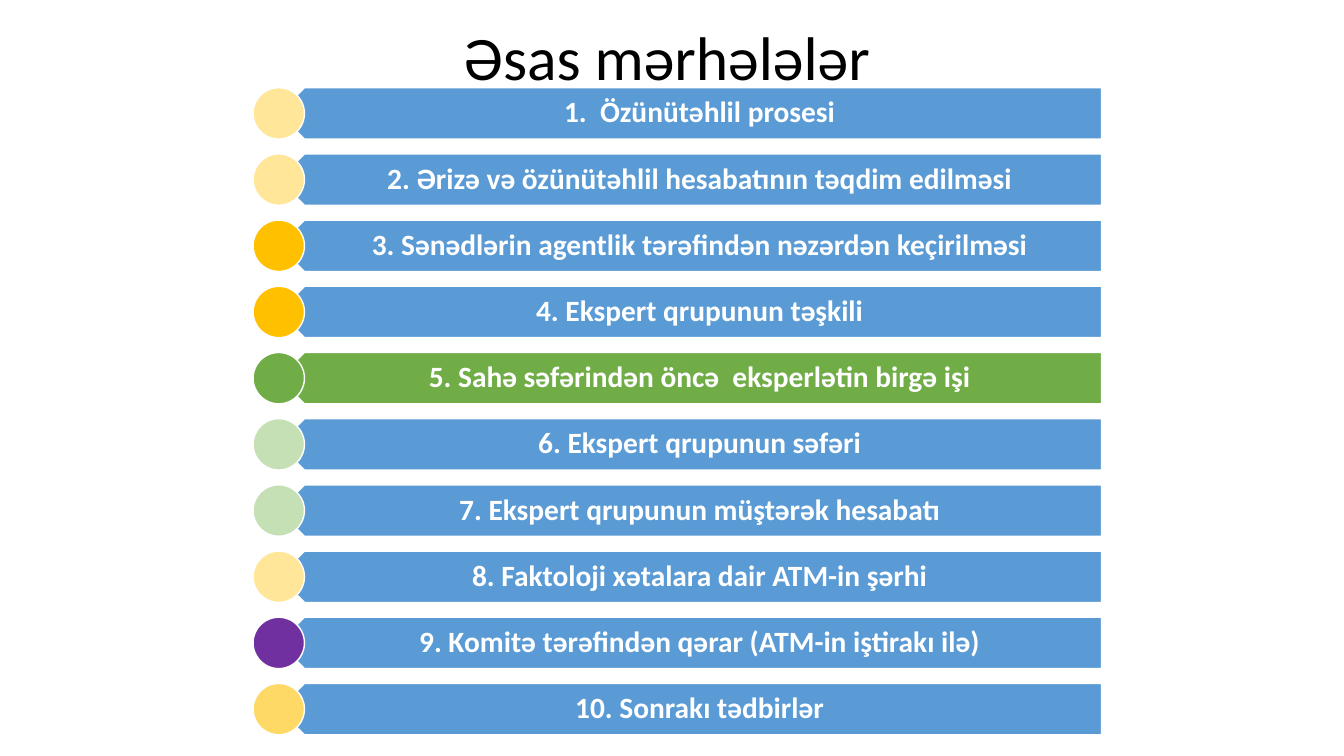
from dataclasses import dataclass

from pptx import Presentation
from pptx.dml.color import RGBColor
from pptx.enum.shapes import MSO_SHAPE
from pptx.enum.text import MSO_ANCHOR, PP_ALIGN
from pptx.util import Inches, Length, Pt

PENTAGON = MSO_SHAPE.PENTAGON
OVAL = MSO_SHAPE.OVAL
MIDDLE = MSO_ANCHOR.MIDDLE
CENTER = PP_ALIGN.CENTER


@dataclass(frozen=True)
class Theme:
    font: str = "Calibri"
    title_size: int = 44
    stage_size: int = 21
    line_width: int = 1
    line_spacing: float = 0.9
    black: str = "000000"
    white: str = "FFFFFF"
    blue: str = "5B9BD5"
    green: str = "70AD47"
    pale_green: str = "C5E0B4"
    pale_yellow: str = "FFE699"
    yellow: str = "FFD966"
    amber: str = "FFC000"
    purple: str = "7030A0"


@dataclass(frozen=True)
class Grid:
    left: float = 2.51
    first_top: float = 0.87
    last_top: float = 6.78
    rows: int = 10
    unit: float = 0.255

    def column(self, index: float) -> Length:
        return Inches(self.left + index * self.unit)

    def row(self, index: int) -> Length:
        pitch = (self.last_top - self.first_top) / (self.rows - 1)
        return Inches(self.first_top + index * pitch)

    def span(self, units: float) -> Length:
        return Inches(units * self.unit)


THEME = Theme()
GRID = Grid()


@dataclass(frozen=True)
class Stage:
    label: str
    marker: str
    bar: str = THEME.blue


STAGES = [
    Stage("1.  Özünütəhlil prosesi", THEME.pale_yellow),
    Stage("2. Ərizə və özünütəhlil hesabatının təqdim edilməsi", THEME.pale_yellow),
    Stage("3. Sənədlərin agentlik tərəfindən nəzərdən keçirilməsi", THEME.amber),
    Stage("4. Ekspert qrupunun təşkili", THEME.amber),
    Stage("5. Sahə səfərindən öncə  eksperlətin birgə işi", THEME.green, THEME.green),
    Stage("6. Ekspert qrupunun səfəri", THEME.pale_green),
    Stage("7. Ekspert qrupunun müştərək hesabatı", THEME.pale_green),
    Stage("8. Faktoloji xətalara dair ATM-in şərhi", THEME.pale_yellow),
    Stage("9. Komitə tərəfindən qərar (ATM-in iştirakı ilə)", THEME.purple),
    Stage("10. Sonrakı tədbirlər", THEME.yellow),
]


def write_text(shape, text: str, size: int, color: str, bold: bool) -> None:
    frame = shape.text_frame
    frame.text = text
    frame.word_wrap = True
    frame.vertical_anchor = MIDDLE
    paragraph = frame.paragraphs[0]
    paragraph.alignment = CENTER
    paragraph.line_spacing = THEME.line_spacing
    font = paragraph.runs[0].font
    font.name = THEME.font
    font.size = Pt(size)
    font.bold = bold
    font.color.rgb = RGBColor.from_string(color)


def draw_shape(slide, kind: MSO_SHAPE, column: float, row: int, units: float, color: str):
    shape = slide.shapes.add_shape(
        kind, GRID.column(column), GRID.row(row), GRID.span(units), GRID.span(2)
    )
    shape.shadow.inherit = False
    shape.fill.solid()
    shape.fill.fore_color.rgb = RGBColor.from_string(color)
    shape.line.color.rgb = RGBColor.from_string(THEME.white)
    shape.line.width = Pt(THEME.line_width)
    return shape


def draw_stage(slide, row: int, stage: Stage) -> None:
    bar = draw_shape(slide, PENTAGON, 1, row, 32, stage.bar)
    bar.rotation = 180
    label = slide.shapes.add_textbox(
        GRID.column(1.5), GRID.row(row), GRID.span(31.5), GRID.span(2)
    )
    frame = label.text_frame
    frame.margin_left, frame.margin_right = Inches(0.22), Inches(0.16)
    frame.margin_top = frame.margin_bottom = Inches(0.09)
    write_text(label, stage.label, THEME.stage_size, THEME.white, True)
    draw_shape(slide, OVAL, 0, row, 2, stage.marker)


def draw_title(slide, text: str, width: Length, height: Length) -> None:
    title = slide.shapes.title
    title.left, title.top = int(width * 0.065), 0
    title.width, title.height = int(width * 0.87) - Inches(0.1), int(height * 0.16)
    write_text(title, text, THEME.title_size, THEME.black, False)


def main() -> None:
    presentation = Presentation()
    presentation.slide_width = Inches(13.33)
    presentation.slide_height = Inches(7.5)
    slide = presentation.slides.add_slide(presentation.slide_layouts.get_by_name("Title Only"))
    draw_title(slide, "Əsas mərhələlər", presentation.slide_width, presentation.slide_height)
    for row, stage in enumerate(STAGES):
        draw_stage(slide, row, stage)
    presentation.save("out.pptx")


if __name__ == "__main__":
    main()
